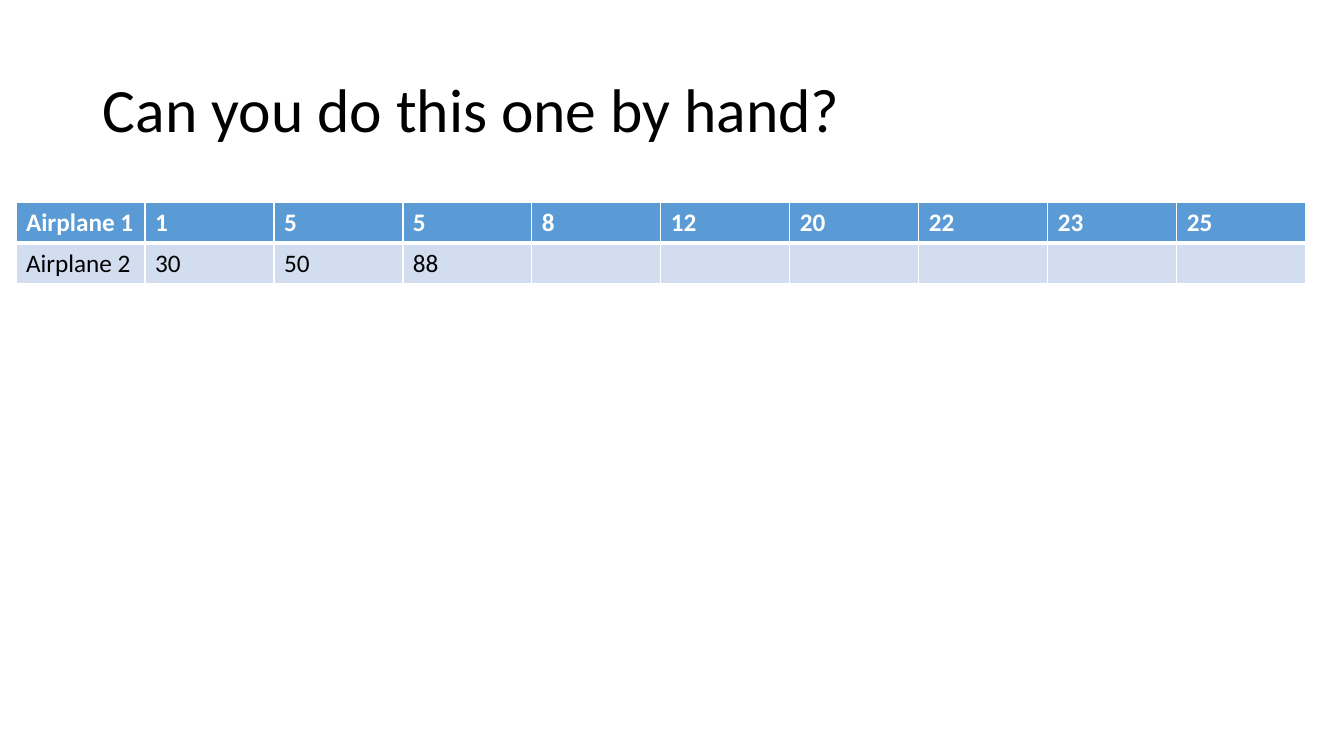
from lxml.etree import SubElement
from pptx import Presentation
from pptx.dml.color import RGBColor
from pptx.enum.text import MSO_ANCHOR
from pptx.oxml.ns import qn
from pptx.util import Pt

TITLE = "Can you do this one by hand?"
ROWS = [
    ["Airplane 1", "1", "5", "5", "8", "12", "20", "22", "23", "25"],
    ["Airplane 2", "30", "50", "88", "", "", "", "", "", ""],
]
# Sides are left, right, top, bottom; widths in points
ROW_STYLES = [
    {"fill": "5B9BD5", "color": "FFFFFF", "bold": True,
     "borders": {"L": 1, "R": 1, "T": 1, "B": 3}},
    {"fill": "D2DEEF", "color": "000000", "bold": False,
     "borders": {"L": 1, "R": 1, "T": 3, "B": 1}},
]
BORDER_COLOR = "FFFFFF"
FONT = "Calibri"

SLIDE_SIZE = (1344, 756)
TITLE_BOX = (93, 40, 1159, 146)
TABLE_LEFT, TABLE_TOP = 16, 202
COLUMN_WIDTH, ROW_HEIGHT = 129, 41


def px(length):
    return round(length * 914400 / 100.8)


def rgb(hex_color):
    return RGBColor.from_string(hex_color)


def write_text(text_frame, text, size=18, color="000000", bold=False, line_spacing=None):
    paragraph = text_frame.paragraphs[0]
    paragraph.line_spacing = line_spacing
    run = paragraph.add_run()
    run.text = text
    run.font.name = FONT
    run.font.size = Pt(size)
    run.font.bold = bold
    run.font.color.rgb = rgb(color)


def add_borders(cell, widths):
    properties = cell._tc.get_or_add_tcPr()
    for side, width in widths.items():
        line = SubElement(properties, qn(f"a:ln{side}"), w=str(Pt(width)))
        fill = SubElement(line, qn("a:solidFill"))
        SubElement(fill, qn("a:srgbClr"), val=BORDER_COLOR)


def add_title(slide):
    text_frame = slide.shapes.add_textbox(*map(px, TITLE_BOX)).text_frame
    text_frame.word_wrap = True
    text_frame.vertical_anchor = MSO_ANCHOR.MIDDLE
    write_text(text_frame, TITLE, size=44, line_spacing=0.9)


def add_airplane_table(slide):
    row_count, column_count = len(ROWS), len(ROWS[0])
    table = slide.shapes.add_table(
        row_count, column_count, px(TABLE_LEFT), px(TABLE_TOP),
        px(COLUMN_WIDTH * column_count), px(ROW_HEIGHT * row_count)).table
    for row, values, style in zip(table.rows, ROWS, ROW_STYLES):
        for cell, value in zip(row.cells, values):
            add_borders(cell, style["borders"])
            cell.fill.solid()
            cell.fill.fore_color.rgb = rgb(style["fill"])
            if value:
                write_text(cell.text_frame, value, color=style["color"], bold=style["bold"])


def main():
    presentation = Presentation()
    presentation.slide_width, presentation.slide_height = map(px, SLIDE_SIZE)
    slide = presentation.slides.add_slide(presentation.slide_layouts[6])
    add_title(slide)
    add_airplane_table(slide)
    presentation.save("out.pptx")


if __name__ == "__main__":
    main()
